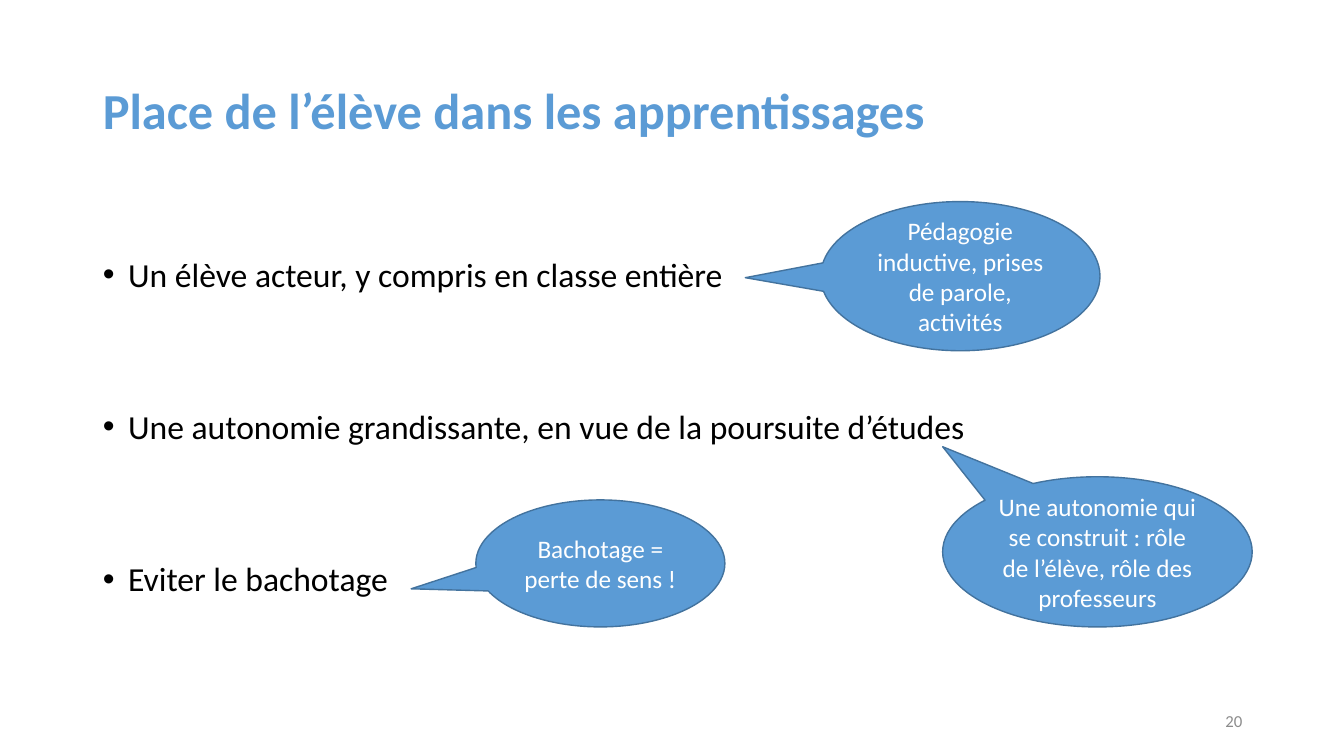
from pptx import Presentation
from pptx.dml.color import RGBColor
from pptx.enum.shapes import MSO_SHAPE as Shape
from pptx.enum.text import MSO_ANCHOR as Anchor, MSO_AUTO_SIZE as AutoSize, PP_ALIGN as Align
from pptx.util import Emu, Pt

EMU_PER_PX = 9144


def px(length):
    """Turn whole pixels into EMU."""
    return Emu(length * EMU_PER_PX)


def color(hex_value):
    """Turn a hex string into a colour."""
    return RGBColor.from_string(hex_value)


def write(frame, *lines, size, ink, bold=False, align=Align.LEFT,
          anchor=Anchor.MIDDLE, spacing=1.0, gap=0, hanging=0):
    """Fill a text frame with one formatted paragraph per line."""
    frame.word_wrap = True
    frame.auto_size = AutoSize.NONE
    frame.vertical_anchor = anchor
    for index, line in enumerate(lines):
        paragraph = frame.add_paragraph() if index else frame.paragraphs[0]
        paragraph.alignment = align
        paragraph.line_spacing = spacing
        paragraph.space_before = Pt(gap if index else 0)
        if hanging:
            properties = paragraph._p.get_or_add_pPr()
            properties.set("marL", str(px(hanging)))
            properties.set("indent", str(-px(hanging)))
        run = paragraph.add_run()
        run.text = line
        run.font.name = "Calibri"
        run.font.size = Pt(size)
        run.font.bold = bold
        run.font.color.rgb = color(ink)


class LessonSlide:
    """Hold the style and the current slide."""

    accent, outline, ink, light, muted = "5B9BD5", "43739E", "000000", "FFFFFF", "8C8C8C"

    def __init__(self, deck):
        """Add a title and content slide."""
        self.slide = deck.slides.add_slide(deck.slide_layouts[1])

    def place(self, placeholder, box):
        """Move a placeholder and return its text frame."""
        placeholder.left, placeholder.top, placeholder.width, placeholder.height = map(px, box)
        return placeholder.text_frame

    def title(self, text, box):
        """Write the slide title."""
        write(self.place(self.slide.shapes.title, box), text,
              size=36, ink=self.accent, bold=True, spacing=0.9)

    def bullets(self, points, box):
        """Write the widely spaced bullet list."""
        write(self.place(self.slide.placeholders[1], box), *points, size=24,
              ink=self.ink, anchor=Anchor.TOP, spacing=0.9, gap=82.8, hanging=25)

    def callout(self, lines, box, tip):
        """Draw a speech bubble whose tip is relative to its centre."""
        bubble = self.slide.shapes.add_shape(Shape.OVAL_CALLOUT, *map(px, box))
        bubble.adjustments[0], bubble.adjustments[1] = tip
        bubble.shadow.inherit = False
        bubble.fill.solid()
        bubble.fill.fore_color.rgb = color(self.accent)
        bubble.line.color.rgb = color(self.outline)
        bubble.line.width = Pt(1)
        write(bubble.text_frame, *lines, size=18, ink=self.light, align=Align.CENTER)

    def page_number(self, number, box):
        """Write the page number."""
        footer = self.slide.shapes.add_textbox(*map(px, box))
        write(footer.text_frame, number, size=12, ink=self.muted, align=Align.RIGHT)


def main():
    """Build and save the slide."""
    deck = Presentation()
    deck.slide_width, deck.slide_height = px(1333), px(750)
    lesson = LessonSlide(deck)
    lesson.title("Place de l’élève dans les apprentissages", (92, 40, 1150, 145))
    lesson.bullets(("Un élève acteur, y compris en classe entière",
                    "Une autonomie grandissante, en vue de la poursuite d’études",
                    "Eviter le bachotage"), (92, 251, 1150, 425))
    callouts = (
        (("Bachotage =", "perte de sens !"), (472, 496, 247, 126), (-0.76, 0.2)),
        (("Une autonomie qui se construit : rôle de l’élève, rôle des professeurs",),
         (935, 473, 307, 149), (-0.5, -0.7)),
        (("Pédagogie inductive, prises de parole, activités",),
         (814, 200, 277, 148), (-0.77, 0.01)),
    )
    for lines, box, tip in callouts:
        lesson.callout(lines, box, tip)
    lesson.page_number("20", (942, 695, 300, 40))
    deck.save("out.pptx")


if __name__ == "__main__":
    main()
